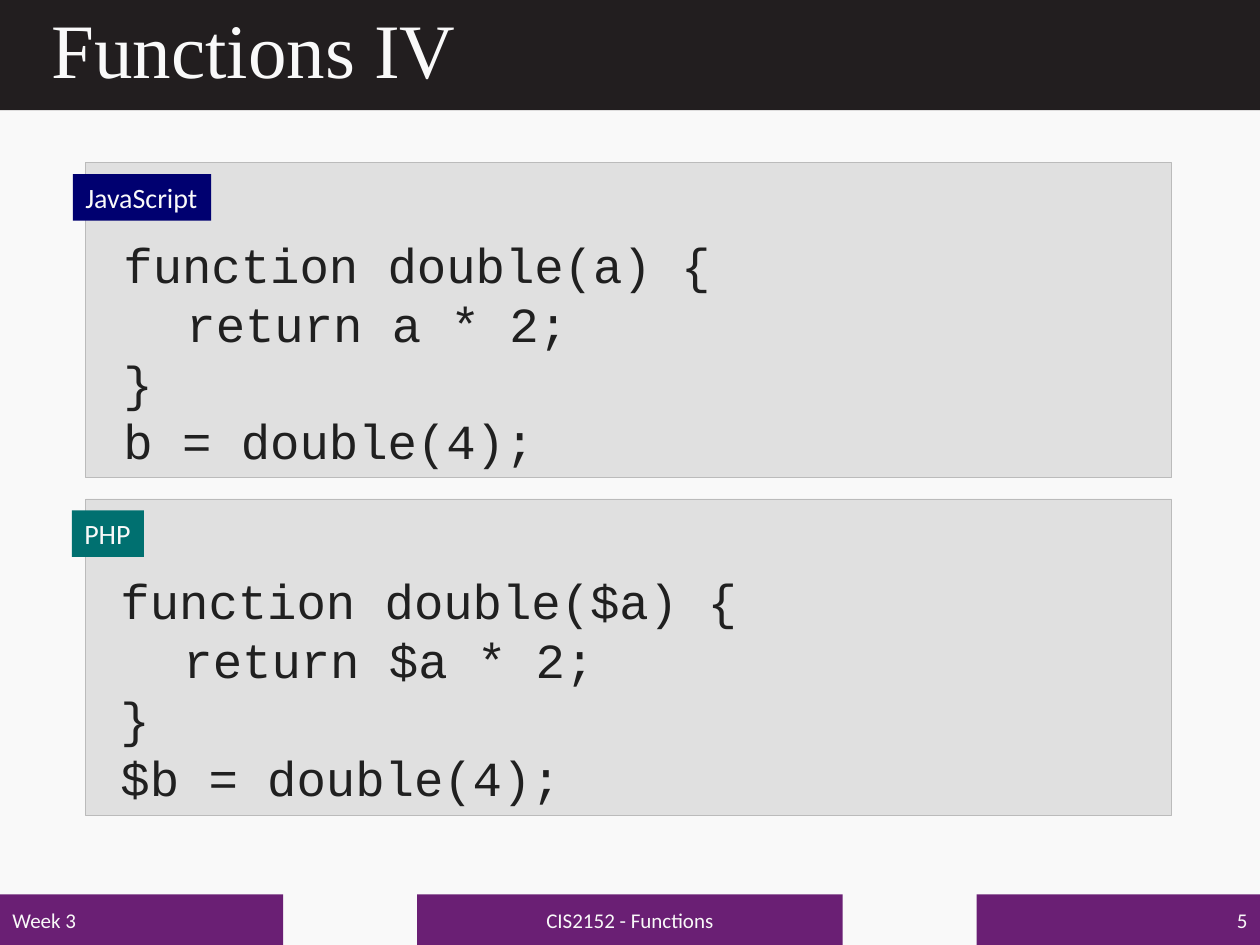
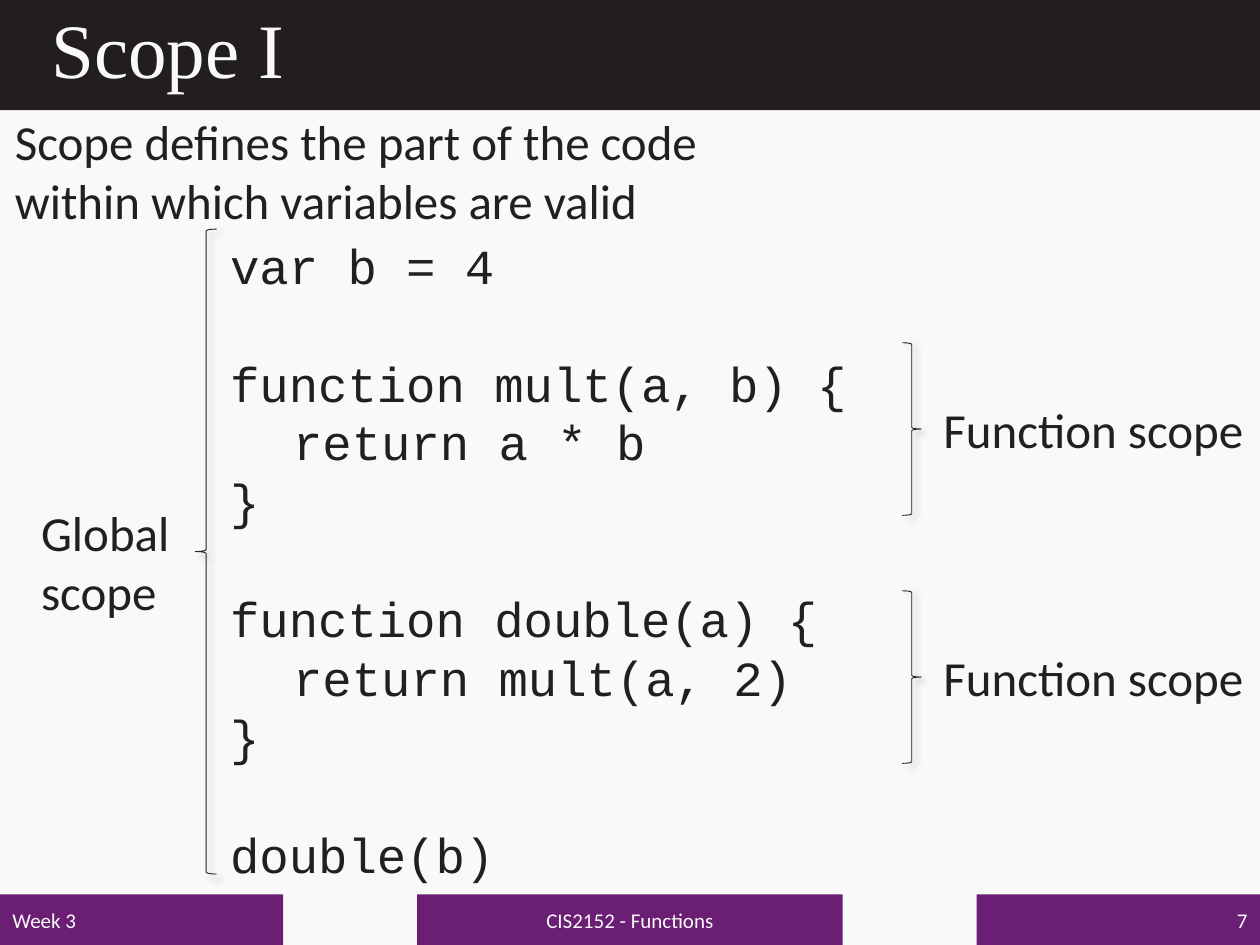
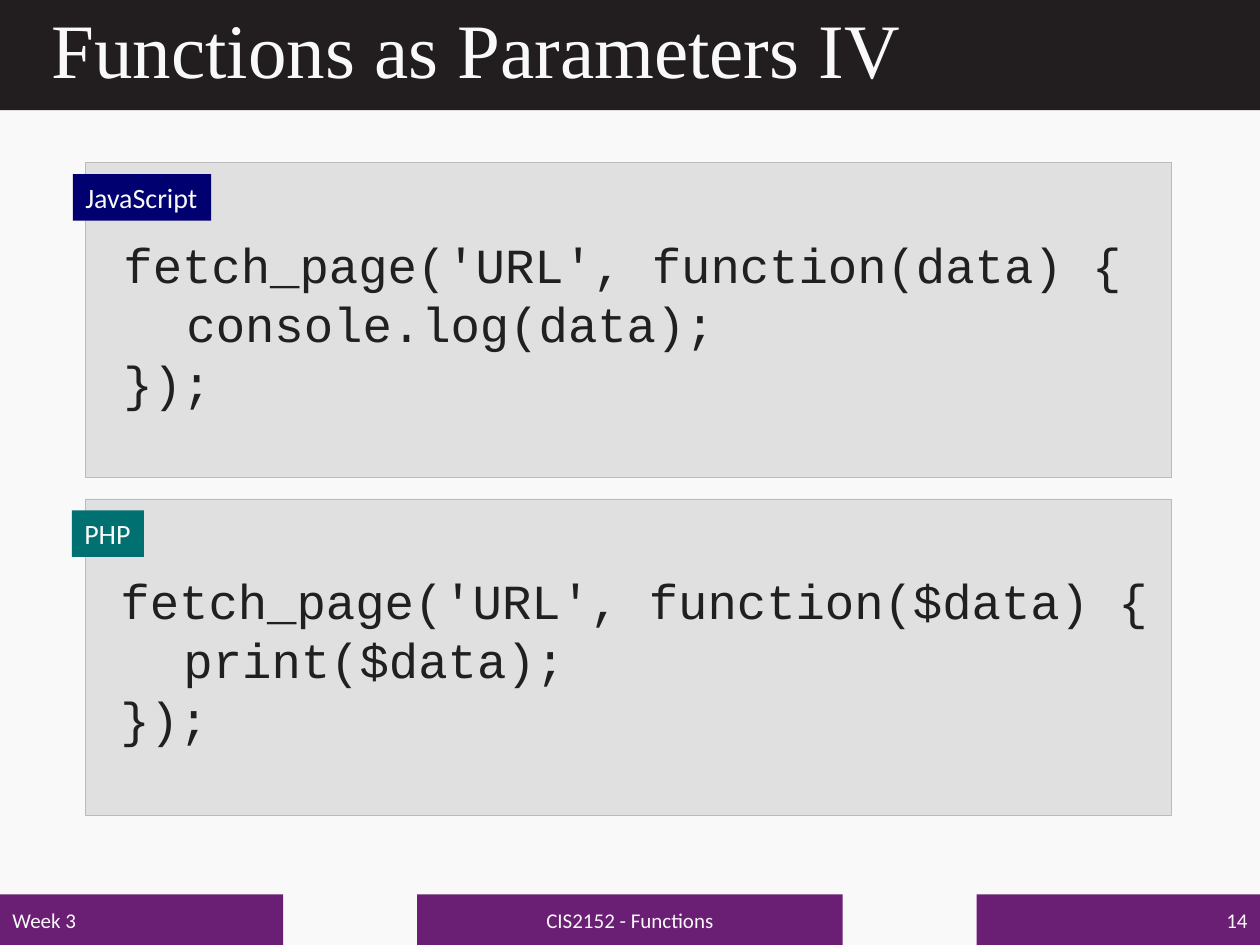
import dataclasses
import typing

import lxml.etree
import pptx
import pptx.dml.color
import pptx.enum.shapes
import pptx.enum.text
import pptx.oxml
import pptx.oxml.ns
import pptx.util

Cm = pptx.util.Cm
Pt = pptx.util.Pt
Align = pptx.enum.text.PP_ALIGN
Anchor = pptx.enum.text.MSO_ANCHOR
Preset = pptx.enum.shapes.MSO_SHAPE


@dataclasses.dataclass(frozen=True)
class Theme:
    paper: str = "F9F9F9"
    ink: str = "202020"
    band: str = "221E1F"
    footer: str = "6A1F74"
    panel: str = "E0E0E0"
    panel_edge: str = "BBBBBB"
    javascript: str = "000070"
    php: str = "007070"
    title_font: str = "Times New Roman"
    body_font: str = "Calibri"
    code_font: str = "Courier New"
    title_size: int = 44
    body_size: int = 28
    tag_size: int = 16
    footer_size: int = 12
    line_width: float = 0.5


THEME = Theme()


@dataclasses.dataclass(frozen=True)
class Area:
    left: float
    top: float
    width: float
    height: float

    def lengths(self) -> tuple:
        return Cm(self.left), Cm(self.top), Cm(self.width), Cm(self.height)


@dataclasses.dataclass(frozen=True)
class TextStyle:
    font: str
    size: int
    color: str
    align: typing.Any = Align.LEFT
    anchor: typing.Any = Anchor.TOP
    wrap: bool = True
    grow: bool = False
    line_spacing: float | None = None


@dataclasses.dataclass(frozen=True)
class Language:
    name: str
    color: str
    panel: Area
    tag_left: float
    tag_width: float
    code_left: float


@dataclasses.dataclass(frozen=True)
class Brace:
    preset: typing.Any
    area: Area


@dataclasses.dataclass(frozen=True)
class Label:
    text: str
    area: Area
    wrap: bool = True


TITLE = TextStyle(THEME.title_font, THEME.title_size, THEME.paper,
                  anchor=Anchor.MIDDLE, line_spacing=0.9)
FOOTER = TextStyle(THEME.body_font, THEME.footer_size, THEME.paper, anchor=Anchor.MIDDLE)
TAG = TextStyle(THEME.body_font, THEME.tag_size, THEME.paper, wrap=False, grow=True)
BODY = TextStyle(THEME.body_font, THEME.body_size, THEME.ink, grow=True)
CODE = TextStyle(THEME.code_font, THEME.body_size, THEME.ink, grow=True)
CODE_LINE_HEIGHT = 33.7

JAVASCRIPT = Language("JavaScript", THEME.javascript, Area(1.73, 3.28, 21.89, 6.35), 1.47, 2.79, 2.24)
PHP = Language("PHP", THEME.php, Area(1.73, 10.06, 21.89, 6.38), 1.45, 1.45, 2.18)

SCOPE_CODE = [
    "var b = 4",
    "function mult(a, b) {\n\treturn a * b\n}",
    "function double(a) {\n\treturn mult(a, 2)\n}",
    "double(b)",
]
SCOPE_BRACES = [
    Brace(Preset.RIGHT_BRACE, Area(18.19, 11.91, 0.38, 3.48)),
    Brace(Preset.RIGHT_BRACE, Area(18.19, 6.91, 0.38, 3.48)),
    Brace(Preset.LEFT_BRACE, Area(3.94, 4.62, 0.43, 13.0)),
]
SCOPE_LABELS = [
    Label("Global scope", Area(0.58, 10.01, 3.35, 2.64)),
    Label("Function scope", Area(18.77, 7.92, 6.63, 1.45), False),
    Label("Function scope", Area(18.77, 12.93, 6.63, 1.45), False),
    Label("Scope defines the part of the code within which variables are valid",
          Area(0.05, 2.13, 14.6, 2.64)),
]


def rgb(color: str) -> pptx.dml.color.RGBColor:
    return pptx.dml.color.RGBColor.from_string(color)


def write(shape: typing.Any, text: str, style: TextStyle) -> None:
    frame = shape.text_frame
    frame.text = text
    frame.word_wrap = style.wrap
    frame.vertical_anchor = style.anchor
    if style.grow:
        frame.auto_size = pptx.enum.text.MSO_AUTO_SIZE.SHAPE_TO_FIT_TEXT
    for para in frame.paragraphs:
        para.alignment = style.align
        if style.line_spacing:
            para.line_spacing = style.line_spacing
        for span in para.runs:
            span.font.name = style.font
            span.font.size = Pt(style.size)
            span.font.color.rgb = rgb(style.color)


def add_text(page: typing.Any, area: Area, text: str, style: TextStyle) -> typing.Any:
    box = page.shapes.add_textbox(*area.lengths())
    write(box, text, style)
    return box


def add_block(page: typing.Any, area: Area, color: str, edge: str | None = None) -> typing.Any:
    block = page.shapes.add_shape(Preset.RECTANGLE, *area.lengths())
    block.shadow.inherit = False
    block.fill.solid()
    block.fill.fore_color.rgb = rgb(color)
    if edge:
        block.line.color.rgb = rgb(edge)
        block.line.width = Pt(THEME.line_width)
    else:
        block.line.fill.background()
    return block


def add_brace(page: typing.Any, brace: Brace) -> None:
    shape = page.shapes.add_shape(brace.preset, *brace.area.lengths())
    shape.fill.background()
    shape.line.color.rgb = rgb(THEME.ink)
    shape.line.width = Pt(THEME.line_width)
    shape.shadow.inherit = False
    name = pptx.oxml.ns.qn
    effects = shape._element.spPr.find(name("a:effectLst"))
    shadow = lxml.etree.SubElement(effects, name("a:outerShdw"), blurRad=str(Pt(4)),
                                   dist=str(Pt(3)), dir=str(45 * 60000), rotWithShape="0")
    color = lxml.etree.SubElement(shadow, name("a:srgbClr"), val="000000")
    lxml.etree.SubElement(color, name("a:alpha"), val="40000")


def add_page(deck: typing.Any, title: str, number: int) -> typing.Any:
    page = deck.slides.add_slide(deck.slide_layouts[6])
    page.background.fill.solid()
    page.background.fill.fore_color.rgb = rgb(THEME.paper)
    add_block(page, Area(0, 0, 25.4, 2.22), THEME.band)
    add_text(page, Area(0.79, 0, 23.85, 2.18), title, TITLE)
    for left, width, text, align in [
        (0, 5.71, "Week 3", Align.LEFT),
        (8.41, 8.58, "CIS2152 - Functions", Align.CENTER),
        (19.69, 5.71, str(number), Align.RIGHT),
    ]:
        block = add_block(page, Area(left, 18.03, width, 1.02), THEME.footer)
        write(block, text, dataclasses.replace(FOOTER, align=align))
    return page


def add_snippet(page: typing.Any, language: Language, code: str) -> None:
    panel = language.panel
    add_block(page, panel, THEME.panel, THEME.panel_edge)
    lines = code.split("\n")
    code_area = Area(language.code_left, panel.top + 1.32,
                     0.6 * max(map(len, lines)) + 0.4, 1.2 * len(lines) + 0.25)
    add_text(page, code_area, code, dataclasses.replace(CODE, wrap=False))
    tag = add_block(page, Area(language.tag_left, panel.top + 0.23, language.tag_width, 0.94),
                    language.color)
    write(tag, language.name, TAG)


def add_comparison(deck: typing.Any, title: str, number: int, javascript: str, php: str) -> None:
    page = add_page(deck, title, number)
    add_snippet(page, JAVASCRIPT, javascript)
    add_snippet(page, PHP, php)


def add_scope(deck: typing.Any) -> None:
    page = add_page(deck, "Scope I", 7)
    box = add_text(page, Area(4.39, 4.62, 13.23, 13.41), "\n".join(SCOPE_CODE), CODE)
    first_line = 0
    for section in SCOPE_CODE:
        if first_line:
            box.text_frame.paragraphs[first_line].space_before = Pt(CODE_LINE_HEIGHT)
        first_line += len(section.split("\n"))
    for brace in SCOPE_BRACES:
        add_brace(page, brace)
    for label in SCOPE_LABELS:
        add_text(page, label.area, label.text, dataclasses.replace(BODY, wrap=label.wrap))


def main() -> None:
    deck = pptx.Presentation()
    deck.slide_width, deck.slide_height = Cm(25.4), Cm(19.05)
    add_comparison(deck, "Functions IV", 5,
                   "function double(a) {\n\treturn a * 2;\n}\nb = double(4);",
                   "function double($a) {\n\treturn $a * 2;\n}\n$b = double(4);")
    add_scope(deck)
    add_comparison(deck, "Functions as Parameters IV", 14,
                   "fetch_page('URL', function(data) {\n\tconsole.log(data);\n});",
                   "fetch_page('URL', function($data) {\n\tprint($data);\n});")
    deck.save("out.pptx")


if __name__ == "__main__":
    main()
